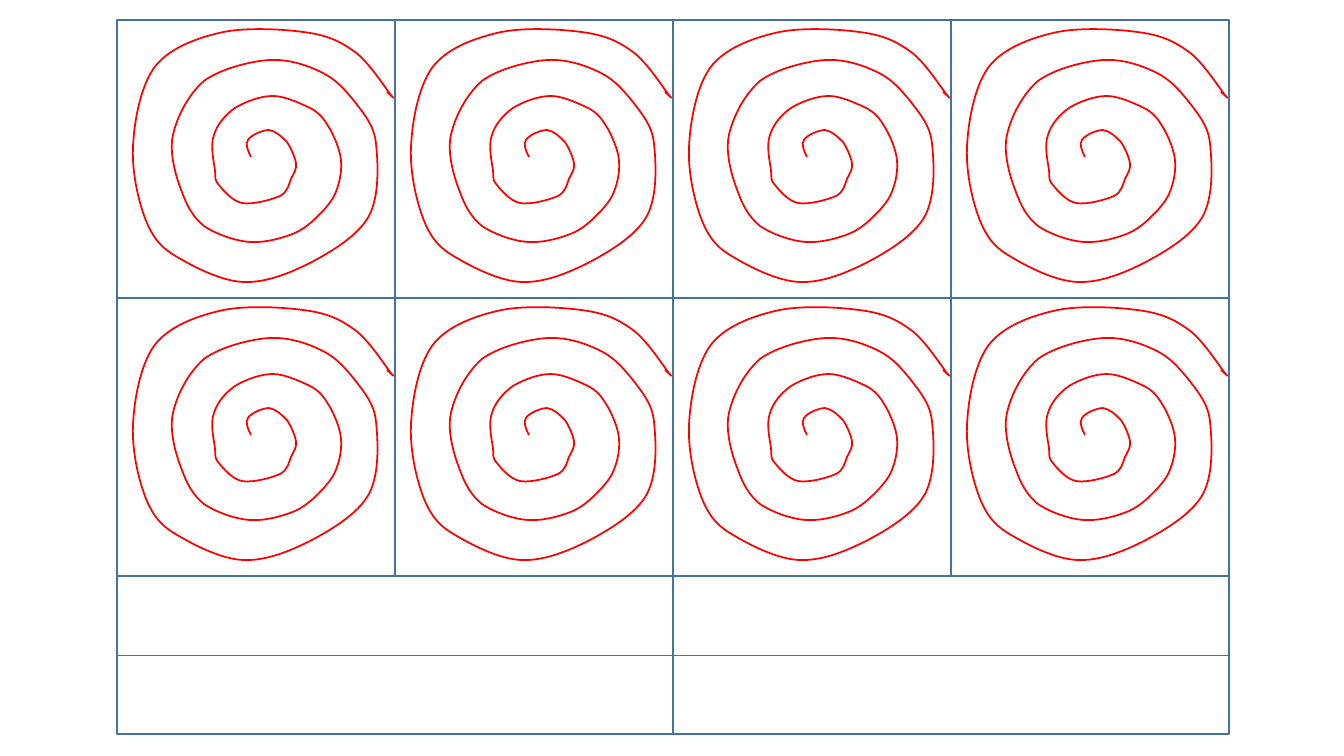
from dataclasses import dataclass
from itertools import product

import pptx
import pptx.dml.color
import pptx.enum.shapes
import pptx.oxml.ns
import pptx.oxml.xmlchemy
import pptx.util


@dataclass(frozen=True)
class Theme:
    frame: str = "43739E"
    spiral: str = "FF0000"
    frame_width: float = 1
    rule_width: float = 0.5
    spiral_width: float = 1.25


SLIDE_WIDTH, SLIDE_HEIGHT = 1344, 756
LEFT, TOP = 117, 20
TILE = 278
COLUMNS, ROWS = 4, 2
ANSWER_WIDTH, ANSWER_HEIGHT = 2 * TILE, 158

SPIRAL_START = (134, 137)
SPIRAL_CURVES = [
    ((131, 131), (128, 124), (131, 120)),
    ((134, 115), (146, 110), (152, 110)),
    ((159, 111), (165, 117), (170, 122)),
    ((174, 128), (178, 137), (179, 143)),
    ((180, 149), (177, 153), (174, 159)),
    ((172, 164), (171, 172), (163, 176)),
    ((154, 180), (135, 185), (125, 183)),
    ((115, 181), (106, 170), (102, 165)),
    ((97, 159), (99, 159), (98, 150)),
    ((97, 142), (93, 126), (97, 115)),
    ((100, 105), (108, 95), (118, 88)),
    ((128, 82), (143, 76), (156, 76)),
    ((168, 76), (185, 84), (195, 89)),
    ((205, 95), (208, 101), (213, 109)),
    ((218, 118), (223, 130), (224, 140)),
    ((225, 150), (223, 161), (220, 169)),
    ((217, 178), (213, 183), (206, 191)),
    ((199, 198), (191, 207), (178, 213)),
    ((166, 218), (148, 223), (133, 222)),
    ((118, 221), (99, 214), (87, 206)),
    ((76, 197), (70, 186), (65, 172)),
    ((59, 157), (52, 133), (56, 115)),
    ((60, 97), (71, 75), (87, 61)),
    ((103, 49), (134, 41), (153, 40)),
    ((173, 39), (192, 46), (206, 53)),
    ((220, 60), (229, 71), (238, 82)),
    ((247, 94), (257, 105), (259, 123)),
    ((261, 142), (263, 175), (252, 196)),
    ((241, 216), (214, 232), (193, 243)),
    ((171, 254), (148, 263), (126, 262)),
    ((105, 261), (79, 248), (62, 238)),
    ((46, 229), (38, 221), (30, 203)),
    ((22, 184), (15, 154), (16, 128)),
    ((17, 103), (23, 68), (37, 48)),
    ((51, 29), (77, 19), (102, 13)),
    ((126, 7), (164, 9), (186, 12)),
    ((210, 15), (223, 21), (238, 32)),
    ((252, 42), (269, 69), (274, 75)),
    ((280, 82), (273, 74), (270, 72)),
]


class Worksheet:
    SCALE = 914400 / 100.8

    def __init__(self, slide, theme):
        self.slide = slide
        self.theme = theme

    @classmethod
    def emu(cls, px):
        return pptx.util.Emu(round(px * cls.SCALE))

    def stroke(self, line, colour, width):
        line.color.rgb = pptx.dml.color.RGBColor.from_string(colour)
        line.width = pptx.util.Pt(width)

    def group(self):
        return self.slide.shapes.add_group_shape().shapes

    def frame(self, group, left, top, width, height):
        frame = group.add_shape(
            pptx.enum.shapes.MSO_SHAPE.RECTANGLE,
            *map(self.emu, (left, top, width, height)))
        frame.shadow.inherit = False
        frame.fill.background()
        self.stroke(frame.line, self.theme.frame, self.theme.frame_width)

    def rule(self, group, left, right, y):
        rule = group.add_connector(
            pptx.enum.shapes.MSO_CONNECTOR.STRAIGHT,
            *map(self.emu, (left, y, right, y)))
        self.stroke(rule.line, self.theme.frame, self.theme.rule_width)
        rule._element.spPr.append(
            pptx.oxml.xmlchemy.OxmlElement("a:effectLst"))

    def spiral(self, group, left, top):
        builder = group.build_freeform(*SPIRAL_START, scale=self.SCALE)
        for curve in SPIRAL_CURVES:
            builder.add_line_segments(curve, close=False)
        spiral = builder.convert_to_shape(self.emu(left), self.emu(top))
        segments = list(spiral._element.iter(pptx.oxml.ns.qn("a:lnTo")))
        for first in range(0, len(segments), 3):
            bezier = pptx.oxml.xmlchemy.OxmlElement("a:cubicBezTo")
            segments[first].addprevious(bezier)
            for segment in segments[first:first + 3]:
                bezier.append(segment[0])
                segment.getparent().remove(segment)
        spiral.shadow.inherit = False
        spiral.fill.background()
        self.stroke(spiral.line, self.theme.spiral, self.theme.spiral_width)

    def spiral_tile(self, left, top):
        group = self.group()
        self.frame(group, left, top, TILE, TILE)
        self.spiral(group, left, top)

    def answer_box(self, left, top):
        group = self.group()
        self.frame(group, left, top, ANSWER_WIDTH, ANSWER_HEIGHT)
        self.rule(group, left, left + ANSWER_WIDTH, top + ANSWER_HEIGHT // 2)


def main():
    presentation = pptx.Presentation()
    presentation.slide_width = Worksheet.emu(SLIDE_WIDTH)
    presentation.slide_height = Worksheet.emu(SLIDE_HEIGHT)
    blank_layout = presentation.slide_layouts[6]
    worksheet = Worksheet(presentation.slides.add_slide(blank_layout), Theme())
    for row, column in product(range(ROWS), range(COLUMNS)):
        worksheet.spiral_tile(LEFT + column * TILE, TOP + row * TILE)
    for side in range(2):
        worksheet.answer_box(LEFT + side * ANSWER_WIDTH, TOP + ROWS * TILE)
    presentation.save("out.pptx")


if __name__ == "__main__":
    main()
